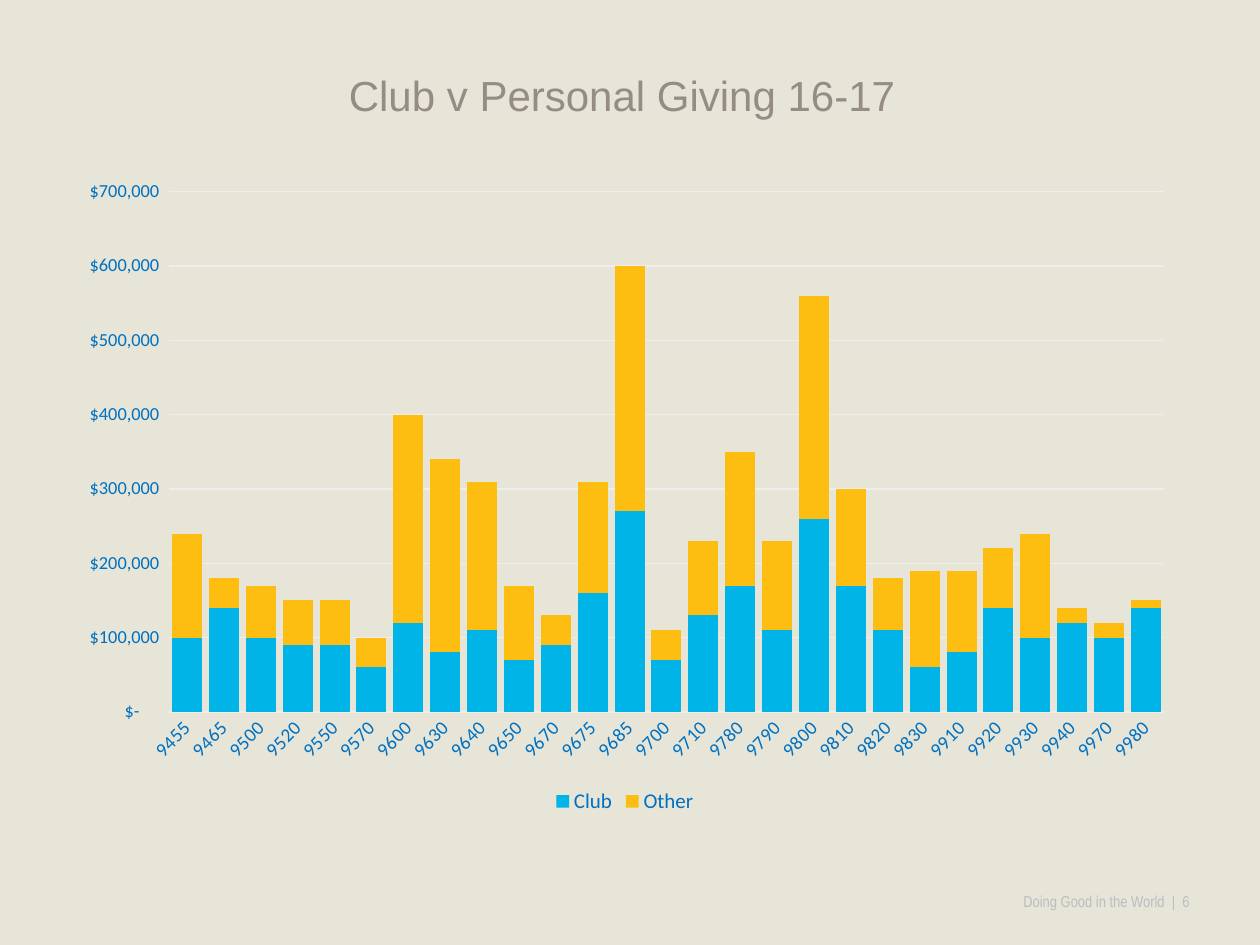
from dataclasses import dataclass

from pptx import Presentation
from pptx.chart.data import CategoryChartData
from pptx.dml.color import RGBColor
from pptx.enum.chart import XL_CHART_TYPE, XL_LEGEND_POSITION, XL_TICK_MARK
from pptx.enum.text import MSO_AUTO_SIZE, PP_ALIGN
from pptx.util import Inches, Pt

STACKED = XL_CHART_TYPE.COLUMN_STACKED
LEGEND_BOTTOM = XL_LEGEND_POSITION.BOTTOM
NO_TICK = XL_TICK_MARK.NONE
LEFT, RIGHT = PP_ALIGN.LEFT, PP_ALIGN.RIGHT
FIT_SHAPE = MSO_AUTO_SIZE.SHAPE_TO_FIT_TEXT


@dataclass(frozen=True)
class Theme:
    background: str = "E6E5D8"
    title: str = "958D85"
    label: str = "0070C0"
    grid: str = "EFEEED"
    footer: str = "BCBDC0"
    club: str = "01B4E7"
    other: str = "FEBD11"
    title_font: str = "Arial"
    chart_font: str = "Calibri"
    footer_font: str = "Arial Narrow"
    title_size: float = 24
    chart_size: float = 10
    value_size: float = 10.5
    category_size: float = 11
    legend_size: float = 12
    footer_size: float = 9
    line_width: float = 0.75


THEME = Theme()
DOLLARS = r'_("$"* #,##0_);_("$"* \(#,##0\);_("$"* "-"??_);_(@_)'
GIVING_THOUSANDS = {
    "9455": (100, 140), "9465": (140, 40), "9500": (100, 70),
    "9520": (90, 60), "9550": (90, 60), "9570": (60, 40),
    "9600": (120, 280), "9630": (80, 260), "9640": (110, 200),
    "9650": (70, 100), "9670": (90, 40), "9675": (160, 150),
    "9685": (270, 330), "9700": (70, 40), "9710": (130, 100),
    "9780": (170, 180), "9790": (110, 120), "9800": (260, 300),
    "9810": (170, 130), "9820": (110, 70), "9830": (60, 130),
    "9910": (80, 110), "9920": (140, 80), "9930": (100, 140),
    "9940": (120, 20), "9970": (100, 20), "9980": (140, 10),
}


def format_font(font, name, size, color):
    font.name = name
    font.size = Pt(size)
    font.bold = False
    font.color.rgb = RGBColor.from_string(color)


def format_line(line):
    line.color.rgb = RGBColor.from_string(THEME.grid)
    line.width = Pt(THEME.line_width)


def add_text(slide, text, box, *, font, size, color, align=LEFT, wrap=True, insets=None):
    shape = slide.shapes.add_textbox(*map(Inches, box))
    frame = shape.text_frame
    frame.word_wrap = wrap
    frame.auto_size = FIT_SHAPE
    if insets:
        (frame.margin_left, frame.margin_top,
         frame.margin_right, frame.margin_bottom) = map(Inches, insets)
    paragraph = frame.paragraphs[0]
    paragraph.alignment = align
    run = paragraph.add_run()
    run.text = text
    format_font(run.font, font, size, color)


def add_title(slide, box):
    add_text(slide, "Club v Personal Giving 16-17", box, font=THEME.title_font,
             size=THEME.title_size, color=THEME.title, wrap=False)


def add_footer(slide, box):
    add_text(slide, "Doing Good in the World  |  6", box, font=THEME.footer_font,
             size=THEME.footer_size, color=THEME.footer, align=RIGHT,
             insets=(0, 0, 0.06, 0))


def add_giving_chart(slide, box):
    data = CategoryChartData()
    data.categories = list(GIVING_THOUSANDS)
    for name, values in zip(("Club", "Other"), zip(*GIVING_THOUSANDS.values())):
        data.add_series(name, [value * 1000 for value in values])
    chart = slide.shapes.add_chart(STACKED, *map(Inches, box), data).chart
    format_font(chart.font, THEME.chart_font, THEME.chart_size, THEME.title)
    chart.has_title = False
    chart.has_legend = True
    chart.legend.position = LEGEND_BOTTOM
    chart.legend.include_in_layout = False
    format_font(chart.legend.font, THEME.chart_font, THEME.legend_size, THEME.label)

    plot = chart.plots[0]
    plot.gap_width = 23
    plot.overlap = 100
    plot.vary_by_categories = False
    for series, color in zip(plot.series, (THEME.club, THEME.other)):
        series.format.fill.solid()
        series.format.fill.fore_color.rgb = RGBColor.from_string(color)

    category_axis, value_axis = chart.category_axis, chart.value_axis
    for axis, size in ((category_axis, THEME.category_size), (value_axis, THEME.value_size)):
        axis.major_tick_mark = axis.minor_tick_mark = NO_TICK
        format_font(axis.tick_labels.font, THEME.chart_font, size, THEME.label)
    format_line(category_axis.format.line)
    category_axis._element.txPr.bodyPr.set("rot", "-2700000")
    value_axis.minimum_scale = 0
    value_axis.maximum_scale = 700000
    value_axis.major_unit = 100000
    value_axis.format.line.fill.background()
    format_line(value_axis.major_gridlines.format.line)
    value_axis.tick_labels.number_format = DOLLARS
    value_axis.tick_labels.number_format_is_linked = False


def main():
    presentation = Presentation()
    presentation.slide_width = Inches(10)
    presentation.slide_height = Inches(7.5)
    slide = presentation.slides.add_slide(presentation.slide_layouts[6])
    slide.background.fill.solid()
    slide.background.fill.fore_color.rgb = RGBColor.from_string(THEME.background)
    add_footer(slide, (7.75, 7.08, 1.75, 0.15))
    add_giving_chart(slide, (0.5, 1.33, 8.92, 5.17))
    add_title(slide, (2.67, 0.5, 4.58, 0.5))
    presentation.save("out.pptx")


if __name__ == "__main__":
    main()
